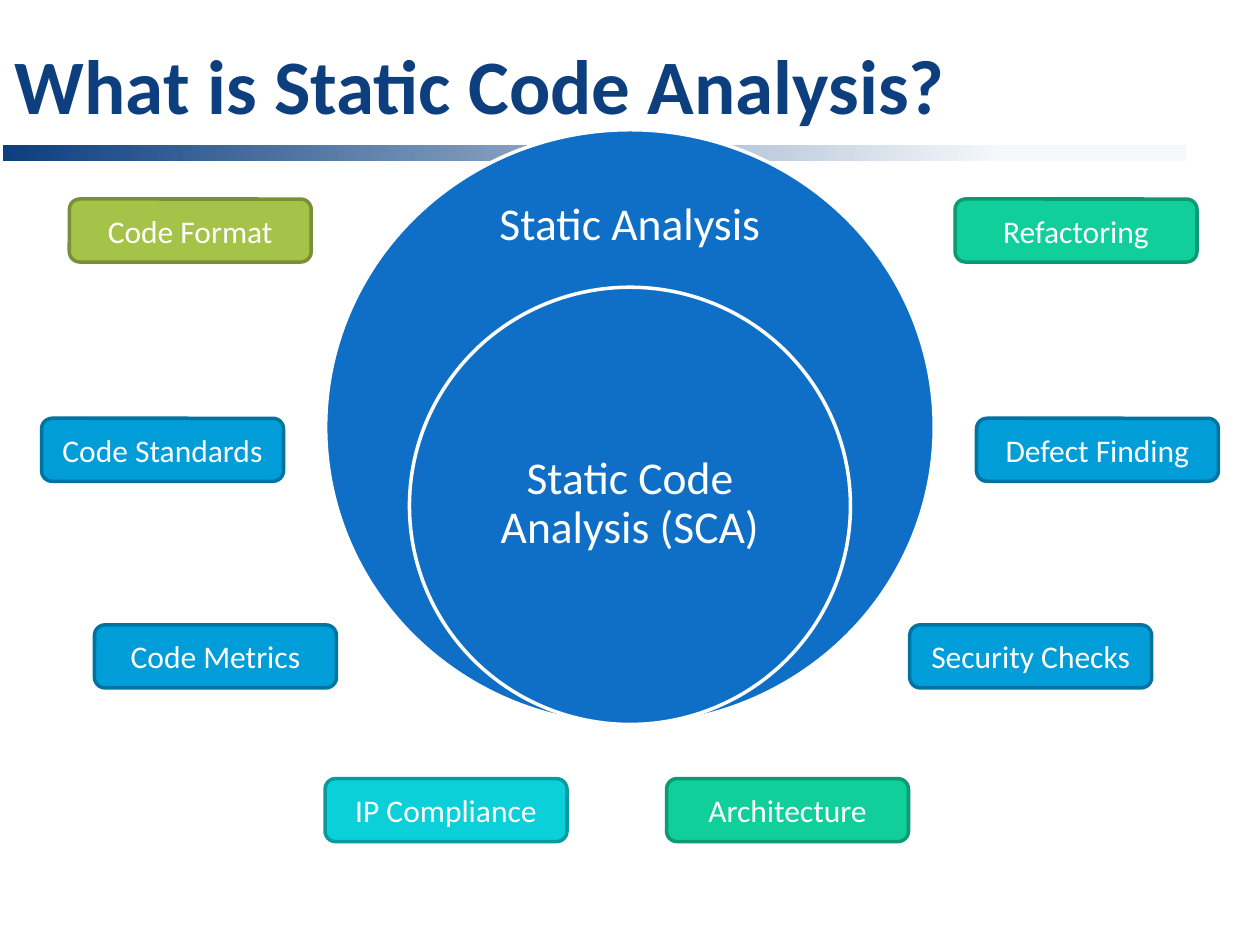
import pptx
import pptx.util
import pptx.dml.color
import pptx.enum.shapes
import pptx.enum.text

Inches, Pt = pptx.util.Inches, pptx.util.Pt
RGB = pptx.dml.color.RGBColor.from_string
SHAPE = pptx.enum.shapes.MSO_SHAPE
ALIGN = pptx.enum.text.PP_ALIGN

COLORS = {
    "navy": "0D3F7E", "pale": "F6F9FC", "white": "FFFFFF", "circle": "0F6FC6",
    "blue": "009DD9", "blue_edge": "0074A1",
    "cyan": "0BD0D9", "cyan_edge": "089AA1",
    "teal": "10CF9B", "teal_edge": "0C9973",
    "lime": "A5C249", "lime_edge": "7A9036",
}


def add_filled(kind, box, fill, edge):
    s = slide.shapes.add_shape(kind, *map(Inches, box))
    s.shadow.inherit = False
    s.fill.solid()
    s.fill.fore_color.rgb = RGB(COLORS[fill])
    s.line.color.rgb = RGB(COLORS[edge])
    s.line.width = Pt(2)
    return s


def write(s, text, size, color="white", align=ALIGN.CENTER, bold=False):
    tf = s.text_frame
    tf.word_wrap = True
    tf.vertical_anchor = pptx.enum.text.MSO_ANCHOR.MIDDLE
    tf.text = text
    p = tf.paragraphs[0]
    p.alignment = align
    font = p.runs[0].font
    font.name, font.size, font.bold = "Calibri", Pt(size), bold
    font.color.rgb = RGB(COLORS[color])
    return tf


prs = pptx.Presentation()
prs.slide_width, prs.slide_height = Inches(10), Inches(7.5)
slide = prs.slides.add_slide(prs.slide_layouts[6])

# Fading rule and title
rule = add_filled(SHAPE.RECTANGLE, (0.02, 1.15, 9.39, 0.13), "navy", "navy")
rule.line.fill.background()
rule.fill.gradient()
rule.fill.gradient_angle = 0
for stop, color, position in zip(rule.fill.gradient_stops, ("navy", "pale"), (0, 0.85)):
    stop.color.rgb = RGB(COLORS[color])
    stop.position = position

title = slide.shapes.add_textbox(*map(Inches, (0.02, 0.04, 9, 1.25)))
write(title, "What is Static Code Analysis?", 44, "navy", ALIGN.LEFT, True)

# Nested circles, centred on the slide and meeting at the bottom
center_x, circles_bottom = 5, 5.75
circles = [
    ("Static Analysis", 4.83, 4.72, (2.54, 0.8), 1.39),
    ("Static Code Analysis (SCA)", 3.5, 3.47, (2.47, 1.73), 3.14),
]
for text, width, height, (label_w, label_h), label_top in circles:
    add_filled(SHAPE.OVAL, (center_x - width / 2, circles_bottom - height, width, height),
               "circle", "white")
    label = slide.shapes.add_textbox(
        *map(Inches, (center_x - label_w / 2, label_top, label_w, label_h)))
    tf = write(label, text, 26)
    tf.margin_left = tf.margin_right = tf.margin_top = tf.margin_bottom = Inches(0.2)
    tf.paragraphs[0].line_spacing = 0.9

# Topics around the circles: row top, then left edge, text and colour of each
tag_w, tag_h = 1.92, 0.5
tag_rows = [
    (1.58, [(0.55, "Code Format", "lime"), (7.58, "Refactoring", "teal")]),
    (3.32, [(0.33, "Code Standards", "blue"), (7.75, "Defect Finding", "blue")]),
    (4.96, [(0.75, "Code Metrics", "blue"), (7.22, "Security Checks", "blue")]),
    (6.18, [(2.58, "IP Compliance", "cyan"), (5.29, "Architecture", "teal")]),
]
for top, tags in tag_rows:
    for left, text, color in tags:
        tag = add_filled(SHAPE.ROUNDED_RECTANGLE, (left, top, tag_w, tag_h),
                         color, color + "_edge")
        write(tag, text, 18)

prs.save("out.pptx")
